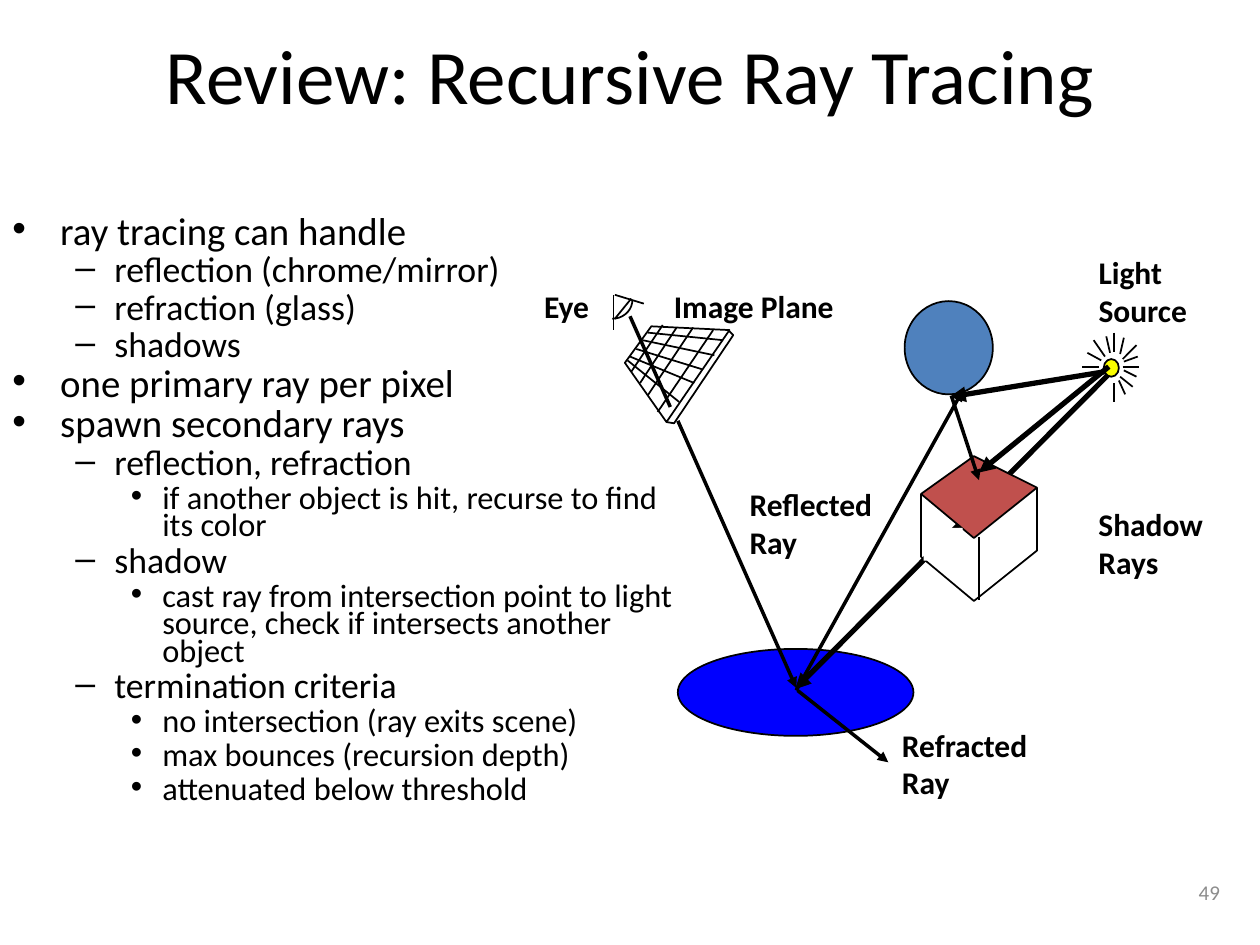
import math
from dataclasses import dataclass

import pptx
import pptx.dml.color
import pptx.enum.shapes
import pptx.enum.text
import pptx.oxml.ns
import pptx.util
from lxml import etree
from pptx.util import Inches

SHAPE = pptx.enum.shapes.MSO_SHAPE
ALIGN = pptx.enum.text.PP_ALIGN
ANCHOR = pptx.enum.text.MSO_ANCHOR


@dataclass(frozen=True)
class Theme:
    """Colours, font and type sizes of the slide."""
    font: str = "Calibri"
    ink: str = "000000"
    paper: str = "FFFFFF"
    muted: str = "8C8C8C"
    floor: str = "0000FF"
    ball: str = "4F81BD"
    cube: str = "C0504D"
    lamp: str = "FAFD00"
    title: float = 44
    label: float = 18
    number: float = 12
    levels: tuple = (22.2, 20.4, 18.5)
    thin: float = 1
    ray: float = 2
    shadow_ray: float = 3


T = Theme()
INDENTS = ((0.38, 0.38, "•"), (0.81, 0.31, "–"), (1.19, 0.25, "•"))
OUTLINE = [
    (0, "ray tracing can handle"),
    (1, "reflection (chrome/mirror)"),
    (1, "refraction (glass)"),
    (1, "shadows"),
    (0, "one primary ray per pixel"),
    (0, "spawn secondary rays"),
    (1, "reflection, refraction"),
    (2, "if another object is hit, recurse to find its color"),
    (1, "shadow"),
    (2, "cast ray from intersection point to light source, check if intersects another object"),
    (1, "termination criteria"),
    (2, "no intersection (ray exits scene)"),
    (2, "max bounces (recursion depth)"),
    (2, "attenuated below threshold"),
]
CUBE_EDGES = [(7.31, 3.92, 7.31, 4.42), (8.23, 3.87, 8.23, 4.37), (7.77, 4.26, 7.77, 4.76)]
LAMP_RAYS = [
    (8.84, 2.64, 8.84, 2.79), (8.84, 3.04, 8.84, 3.19), (8.91, 2.91, 9.04, 2.91),
    (8.59, 2.91, 8.72, 2.91), (8.68, 2.7, 8.77, 2.83), (8.78, 2.67, 8.81, 2.8),
    (8.63, 2.8, 8.74, 2.86), (9.02, 2.74, 8.91, 2.85), (8.92, 2.68, 8.89, 2.81),
    (9.03, 2.83, 8.92, 2.87), (8.89, 2.99, 8.99, 3.07), (8.88, 3.02, 8.93, 3.13),
    (8.92, 2.94, 9.02, 2.99),
]
EYE_LINES = [(4.87, 2.34, 4.87, 2.62), (4.88, 2.34, 5.11, 2.41), (5.01, 2.37, 4.88, 2.53)]
PLANE_GRID = [
    (5.14, 2.64, 5.74, 2.7), (5.1, 2.7, 5.67, 2.82), (5.05, 2.77, 5.57, 2.93),
    (5, 2.83, 5.51, 3.04), (4.98, 2.86, 5.39, 3.19), (5.66, 2.62, 5.22, 3.27),
    (5.5, 2.6, 5.14, 3.14), (5.37, 2.6, 5.08, 3.04), (5.26, 2.58, 5.01, 2.95),
]
RAYS = [
    (6.32, 5.48, 7.64, 3.1), (5.38, 3.34, 6.32, 5.46),
    (6.33, 5.48, 7.05, 6.05), (7.55, 3.14, 7.77, 3.81),
]
LABELS = [
    ("Image Plane", 5.25, 2.23, 1.66, 0.4),
    ("Light\nSource", 8.62, 1.96, 1.05, 0.7),
    ("Eye", 4.22, 2.23, 0.64, 0.4),
    ("Refracted\nRay", 7.06, 5.71, 1.35, 0.7),
    ("Reflected\nRay", 5.85, 3.8, 1.32, 0.7),
    ("Shadow\nRays", 8.62, 3.96, 1.16, 0.7),
]


def rgb(value):
    """Turn a hex string into a colour."""
    return pptx.dml.color.RGBColor.from_string(value)


def assign(obj, values):
    """Set attributes from a dict of format values."""
    for name, value in values.items():
        setattr(obj, name, value)


def child(parent, tag, **attrs):
    """Append a DrawingML element."""
    return etree.SubElement(parent, pptx.oxml.ns.qn(tag), attrs)


def add_run(p, text, size, color=T.ink, bold=False):
    """Add a formatted run to a paragraph."""
    r = p.add_run()
    r.text = text
    assign(r.font, {"name": T.font, "size": pptx.util.Pt(size), "bold": bold})
    r.font.color.rgb = rgb(color)


def add_text(s, text, box, size, color=T.ink, bold=False, wrap=True,
             align=ALIGN.LEFT, anchor=ANCHOR.TOP):
    """Add a text box with one paragraph per line."""
    tf = s.shapes.add_textbox(*map(Inches, box)).text_frame
    assign(tf, {"word_wrap": wrap, "vertical_anchor": anchor})
    for i, line in enumerate(text.split("\n")):
        p = tf.add_paragraph() if i else tf.paragraphs[0]
        p.alignment = align
        add_run(p, line, size, color, bold)


def add_outline(s, items, box):
    """Add the bulleted outline."""
    tf = s.shapes.add_textbox(*map(Inches, box)).text_frame
    tf.word_wrap = True
    for i, (level, text) in enumerate(items):
        p = tf.add_paragraph() if i else tf.paragraphs[0]
        size = T.levels[level]
        left, hang, bullet = INDENTS[level]
        assign(p, {"level": level, "line_spacing": 0.7,
                   "space_before": pptx.util.Pt(0.2 * size)})
        pPr = p._p.get_or_add_pPr()
        pPr.set("marL", str(Inches(left)))
        pPr.set("indent", str(-Inches(hang)))
        child(pPr, "a:buFont", typeface="Arial")
        child(pPr, "a:buChar", char=bullet)
        add_run(p, text, size)


def style(sp, fill=None, line=T.ink):
    """Set fill and outline of a shape."""
    sp.shadow.inherit = False
    if fill:
        sp.fill.solid()
        sp.fill.fore_color.rgb = rgb(fill)
    else:
        sp.fill.background()
    if line:
        sp.line.color.rgb = rgb(line)
        sp.line.width = pptx.util.Pt(T.thin)
    else:
        sp.line.fill.background()


def add_preset(s, kind, box, fill, line=T.ink):
    """Add a preset shape."""
    style(s.shapes.add_shape(kind, *map(Inches, box)), fill, line)


def add_path(s, points, fill=None):
    """Add a freeform through the points, closed when filled."""
    pts = [(Inches(x), Inches(y)) for x, y in points]
    fb = s.shapes.build_freeform(*pts[0], scale=1.0)
    fb.add_line_segments(pts[1:], close=bool(fill))
    style(fb.convert_to_shape(), fill)


def add_line(s, ends, width=T.thin, arrow=False):
    """Add a line, with an arrowhead at its end if asked."""
    kind = pptx.enum.shapes.MSO_CONNECTOR.STRAIGHT
    sp = s.shapes.add_connector(kind, *map(Inches, ends))
    sp.line.color.rgb = rgb(T.ink)
    sp.line.width = pptx.util.Pt(width)
    spPr = sp._element.spPr
    if arrow:
        child(spPr.find(pptx.oxml.ns.qn("a:ln")), "a:tailEnd", type="triangle")
    child(spPr, "a:effectLst")


def add_lines(s, lines, width=T.thin, arrow=False):
    """Add a set of lines of one style."""
    for ends in lines:
        add_line(s, ends, width, arrow)


def add_scene(s):
    """Draw the ray tracing scene."""
    add_preset(s, SHAPE.OVAL, (5.38, 5.15, 1.87, 0.69), T.floor)
    add_line(s, (8.8, 2.97, 6.31, 5.47), T.shadow_ray, True)
    add_path(s, [(7.31, 3.92), (7.73, 3.62), (8.23, 3.87), (7.73, 4.27)], T.cube)
    add_path(s, [(7.31, 4.42), (7.73, 4.77), (8.23, 4.37)])
    add_preset(s, SHAPE.OVAL, (7.18, 2.39, 0.7, 0.74), T.ball)
    add_preset(s, SHAPE.OVAL, (8.76, 2.85, 0.12, 0.14), T.lamp)
    add_lines(s, CUBE_EDGES + LAMP_RAYS + EYE_LINES)
    angles = [math.radians(a) for a in range(0, 91, 10)]
    add_path(s, [(4.86 + 0.16 * math.cos(a), 2.38 + 0.15 * math.sin(a)) for a in angles])
    add_path(s, [(4.96, 2.88), (5.17, 2.59), (5.79, 2.62), (5.29, 3.35)], T.paper)
    add_path(s, [(5.29, 3.35), (5.35, 3.36), (5.82, 2.66), (5.78, 2.62)])
    add_lines(s, PLANE_GRID)
    add_line(s, (8.77, 2.95, 7.54, 3.15), T.shadow_ray, True)
    add_lines(s, RAYS, T.ray, True)
    add_line(s, (5.32, 3.23, 5, 2.51), T.ray)
    add_line(s, (8.8, 2.91, 7.77, 3.75), T.shadow_ray, True)


def main():
    """Build and save the slide."""
    prs = pptx.Presentation()
    assign(prs, {"slide_width": Inches(10), "slide_height": Inches(7.5)})
    s = prs.slides.add_slide(prs.slide_layouts[6])
    add_text(s, "49", (7.7, 6.83, 2.08, 0.5), T.number, T.muted,
             align=ALIGN.RIGHT, anchor=ANCHOR.MIDDLE)
    add_text(s, "Review: Recursive Ray Tracing", (0, 0.17, 10, 0.83), T.title,
             align=ALIGN.CENTER, anchor=ANCHOR.MIDDLE)
    add_outline(s, OUTLINE, (0, 1.69, 5.5, 5.46))
    add_scene(s)
    for text, *box in LABELS:
        add_text(s, text, box, T.label, bold=True, wrap=False)
    add_preset(s, SHAPE.RECTANGLE, (7.33, 4.19, 0.31, 0.26), T.paper, None)
    prs.save("out.pptx")


if __name__ == "__main__":
    main()
